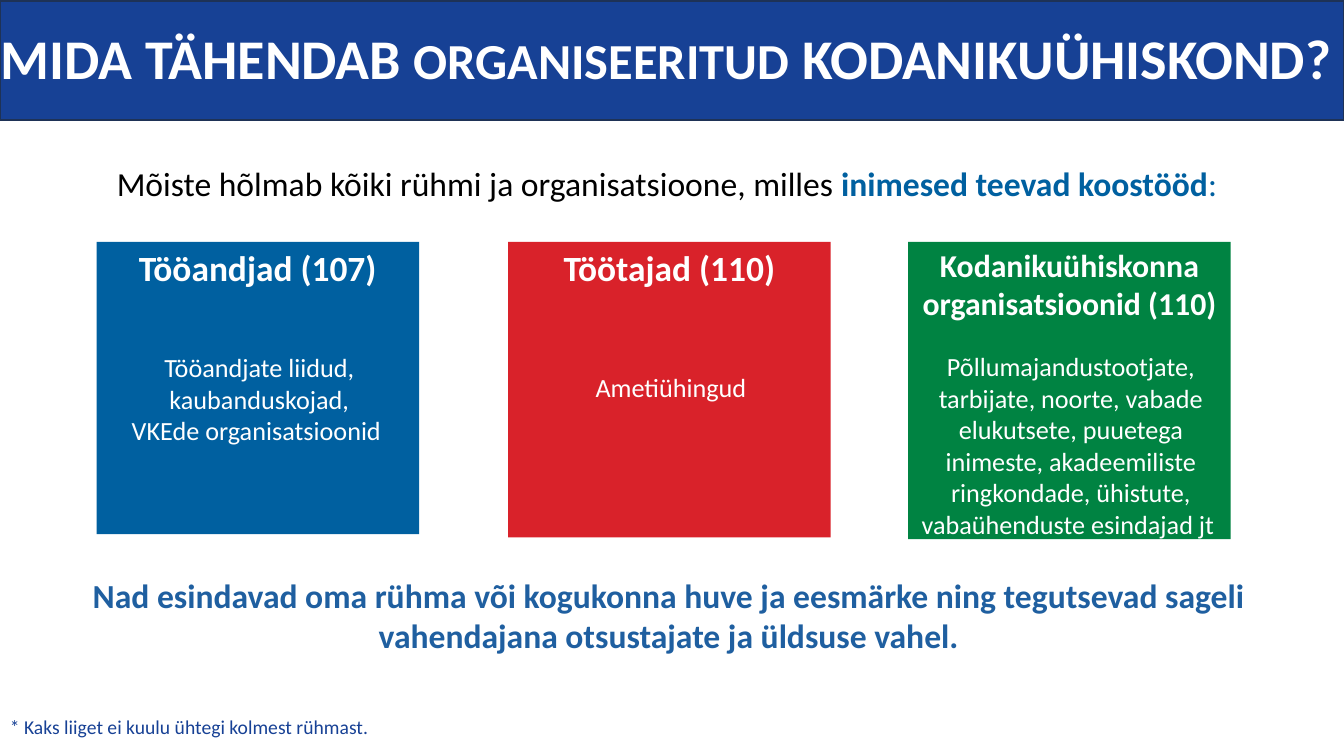
from dataclasses import dataclass
from typing import Optional

from lxml import etree
from pptx import Presentation
from pptx import util as u
from pptx.dml.color import RGBColor
from pptx.enum import shapes, text


@dataclass(frozen=True)
class Theme:
    face: str = "Calibri"
    white: str = "FFFFFF"
    black: str = "000000"
    blue: str = "0060A0"
    red: str = "D9222A"
    green: str = "008342"
    navy: str = "174195"
    edge: str = "1E3256"
    steel: str = "1F5FA0"
    title: float = 40
    small: float = 36
    lead: float = 24
    head: float = 25.3
    tight: float = 22.7
    body: float = 18.7
    note: float = 14


@dataclass(frozen=True)
class Box:
    left: float
    top: float
    width: float
    height: float


@dataclass(frozen=True)
class Style:
    size: float
    color: str
    bold: bool = False


@dataclass(frozen=True)
class Card:
    left: float
    height: float
    fill: str
    head: str
    size: float
    top: float
    lines: tuple[str, ...]


T = Theme()
MID = text.PP_ALIGN.CENTER
WIDE, TALL = 960, 540
SIDE, TOP = 230.4, 172.8

CARDS = (
    Card(69, 208.8, T.blue, "Tööandjad (107)", T.head, 247.5,
         ("Tööandjate liidud,", "kaubanduskojad,", "VKEde organisatsioonid ")),
    Card(363, 211, T.red, "Töötajad (110)", T.head, 261.5, ("Ametiühingud",)),
    Card(648.7, 212.4, T.green, "Kodanikuühiskonna organisatsioonid (110)", T.tight, 247,
         ("Põllumajandustootjate, tarbijate, noorte, vabade elukutsete, puuetega inimeste, "
          "akadeemiliste ringkondade, ühistute, vabaühenduste esindajad jt ",)),
)


def place(shape, box: Box) -> None:
    shape.left, shape.top = u.Pt(box.left), u.Pt(box.top)
    shape.width, shape.height = u.Pt(box.width), u.Pt(box.height)


def ink(font, style: Style) -> None:
    font.name, font.size, font.bold = T.face, u.Pt(style.size), style.bold
    font.color.rgb = RGBColor.from_string(style.color)


def block(slide, box: Box, fill: str, line: Optional[str] = None):
    rect = slide.shapes.add_shape(
        shapes.MSO_SHAPE.RECTANGLE, *map(u.Pt, (box.left, box.top, box.width, box.height)))
    rect.shadow.inherit = False
    rect.fill.solid()
    rect.fill.fore_color.rgb = RGBColor.from_string(fill)
    if line:
        rect.line.color.rgb = RGBColor.from_string(line)
        rect.line.width = u.Pt(1)
    else:
        rect.line.fill.background()
    return rect


def label(slide, box: Box, lines: tuple[str, ...], style: Style, align=MID):
    frame = slide.shapes.add_textbox(
        *map(u.Pt, (box.left, box.top, box.width, box.height))).text_frame
    frame.word_wrap = True
    frame.text = "\n".join(lines)
    for para in frame.paragraphs:
        para.alignment = align
        ink(para.font, style)
    return frame


def fill_in(shape, box: Box, parts: tuple[tuple[str, Style], ...], align):
    place(shape, box)
    frame = shape.text_frame
    frame.auto_size = text.MSO_AUTO_SIZE.NONE
    frame.vertical_anchor = text.MSO_ANCHOR.TOP
    frame.word_wrap = True
    para = frame.paragraphs[0]
    para.alignment = align
    for words, style in parts:
        run = para.add_run()
        run.text = words
        ink(run.font, style)
    return para


def plain(para) -> None:
    props = para._p.get_or_add_pPr()
    props.set("marL", "0")
    props.set("indent", "0")
    etree.SubElement(
        props, "{http://schemas.openxmlformats.org/drawingml/2006/main}buNone")


def card(slide, item: Card) -> None:
    block(slide, Box(item.left, TOP, SIDE, item.height), item.fill)
    label(slide, Box(item.left, 172, SIDE, 39), (item.head,),
          Style(item.size, T.white, True))
    label(slide, Box(item.left, item.top, SIDE + 2, 98), item.lines,
          Style(item.body if hasattr(item, "body") else T.body, T.white))


def main() -> None:
    deck = Presentation()
    deck.slide_width, deck.slide_height = u.Pt(WIDE), u.Pt(TALL)
    slide = deck.slides.add_slide(deck.slide_layouts[1])

    lead = fill_in(slide.placeholders[1], Box(-3.6, 116, WIDE, 41), (
        ("Mõiste hõlmab kõiki rühmi ja organisatsioone, milles ", Style(T.lead, T.black)),
        ("inimesed teevad koostööd", Style(T.lead, T.blue, True)),
        (":", Style(T.lead, T.blue)),
    ), MID)
    lead.line_spacing, lead.space_before = 0.9, u.Pt(5)
    plain(lead)

    for item in CARDS:
        card(slide, item)

    close = label(slide, Box(25.2, 405.4, 905, 114.5), (
        "Nad esindavad oma rühma või kogukonna huve ja eesmärke ning tegutsevad sageli "
        "vahendajana otsustajate ja üldsuse vahel.",), Style(T.lead, T.steel, True))
    close.margin_left = close.margin_right = u.Pt(9.4)
    close.margin_top = close.margin_bottom = u.Pt(5)

    band = block(slide, Box(0, 0.7, WIDE, 85), T.navy, T.edge)
    title = slide.shapes.title
    big = Style(T.title, T.white, True)
    fill_in(title, Box(-6.5, 13, 967, 84), (
        ("MIDA TÄHENDAB ", big),
        ("ORGANISEERITUD", Style(T.small, T.white, True)),
        (" KODANIKUÜHISKOND?", big),
    ), text.PP_ALIGN.LEFT)
    band.element.addnext(title.element)

    label(slide, Box(0, 507, 672.5, 24.5), ("* Kaks liiget ei kuulu ühtegi kolmest rühmast.",),
          Style(T.note, T.navy), text.PP_ALIGN.LEFT)
    deck.save("out.pptx")


if __name__ == "__main__":
    main()
